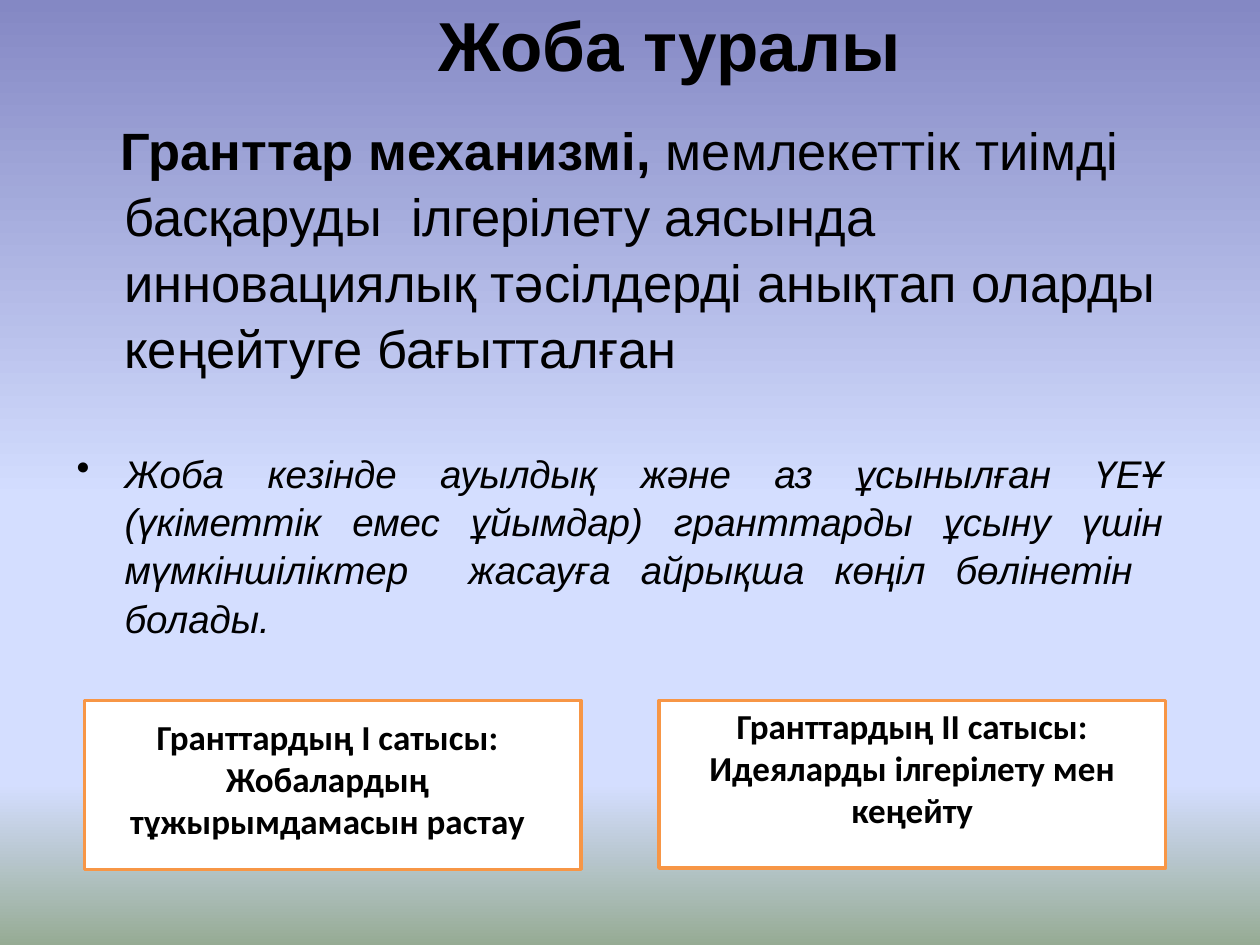
from lxml import etree
from pptx import Presentation
from pptx.dml.color import RGBColor
from pptx.enum.shapes import MSO_SHAPE
from pptx.enum.text import MSO_ANCHOR, PP_ALIGN
from pptx.oxml.ns import qn
from pptx.util import Inches, Pt

# Content
TITLE = "Жоба туралы"
LEAD = "Гранттар механизмі, "
PURPOSE = ("мемлекеттік тиімді басқаруды  ілгерілету аясында инновациялық "
           "тәсілдерді анықтап оларды кеңейтуге бағытталған")
FOCUS = ("Жоба кезінде ауылдық және аз ұсынылған ҮЕҰ (үкіметтік емес ұйымдар) "
         "гранттарды ұсыну үшін мүмкіншіліктер  жасауға айрықша көңіл "
         "бөлінетін  болады.")
STAGE_ONE = "Гранттардың I сатысы: Жобалардың тұжырымдамасын растау"
STAGE_TWO = "Гранттардың II сатысы: Идеяларды ілгерілету мен кеңейту"

COLORS = {"text": "000000", "box": "FFFFFF", "border": "F79646"}
BACKGROUND = [(0, "8488C4"), (53, "D4DEFF"), (83, "D4DEFF"), (100, "96AB94")]


def color(name):
    return RGBColor.from_string(COLORS[name])


def style(paragraph, size, font="Arial", align=PP_ALIGN.LEFT, **flags):
    paragraph.alignment = align
    paragraph.font.name = font
    paragraph.font.size = Pt(size)
    paragraph.font.color.rgb = color("text")
    for flag, value in flags.items():
        setattr(paragraph.font, flag, value)


def add_text_box(slide, *place):
    frame = slide.shapes.add_textbox(*map(Inches, place)).text_frame
    frame.word_wrap = True
    return frame


def add_box(slide, *place):
    shape = slide.shapes.add_shape(MSO_SHAPE.RECTANGLE, *map(Inches, place))
    shape.shadow.inherit = False
    shape.fill.solid()
    shape.fill.fore_color.rgb = color("box")
    shape.line.color.rgb = color("border")
    shape.line.width = Pt(2)
    return shape.text_frame


def write_stage(frame, text, top_margin):
    frame.word_wrap = True
    frame.vertical_anchor = MSO_ANCHOR.TOP
    frame.margin_top = Inches(top_margin)
    paragraph = frame.paragraphs[0]
    paragraph.text = text
    style(paragraph, 20, "Calibri", PP_ALIGN.CENTER, bold=True)


def set_indent(paragraph, first_line, bullet=None):
    properties = paragraph._p.get_or_add_pPr()
    properties.set("marL", str(Inches(0.38)))
    properties.set("indent", str(Inches(first_line)))
    if bullet:
        # The bullet must precede the default run properties
        mark = etree.Element(qn("a:buChar"), char=bullet)
        properties.find(qn("a:defRPr")).addprevious(mark)


def set_background(slide):
    fill = slide.background.fill
    fill.gradient()
    fill.gradient_angle = 270
    stops = slide._element.find(".//" + qn("a:gsLst"))
    for stop in list(stops):
        stops.remove(stop)
    for position, value in BACKGROUND:
        stop = etree.SubElement(stops, qn("a:gs"), pos=str(position * 1000))
        etree.SubElement(stop, qn("a:srgbClr"), val=value)


presentation = Presentation()
presentation.slide_width = Inches(10)
presentation.slide_height = Inches(7.5)
slide = presentation.slides.add_slide(presentation.slide_layouts[6])
set_background(slide)

# Title
title = add_text_box(slide, 2.19, 0, 6.25, 0.7)
title.vertical_anchor = MSO_ANCHOR.MIDDLE
title.paragraphs[0].text = TITLE
style(title.paragraphs[0], 39.6, align=PP_ALIGN.CENTER, bold=True)

# Project description
body = add_text_box(slide, 0.51, 0.86, 8.82, 4.6)
purpose = body.paragraphs[0]
purpose.add_run().text = LEAD
purpose.runs[0].font.bold = True
purpose.add_run().text = PURPOSE
style(purpose, 30)
set_indent(purpose, -0.03)

focus = body.add_paragraph()
focus.text = FOCUS
style(focus, 22, align=PP_ALIGN.JUSTIFY, italic=True)
focus.space_before = Pt(39)
set_indent(focus, -0.38, "•")
for paragraph in body.paragraphs:
    paragraph.line_spacing = 1.05

# Grant stages
add_box(slide, 0.67, 5.56, 3.94, 1.34)
write_stage(add_text_box(slide, 0.83, 5.29, 3.54, 1.69), STAGE_ONE, 0.39)
write_stage(add_box(slide, 5.23, 5.56, 4.02, 1.33), STAGE_TWO, 0.03)

presentation.save("out.pptx")
